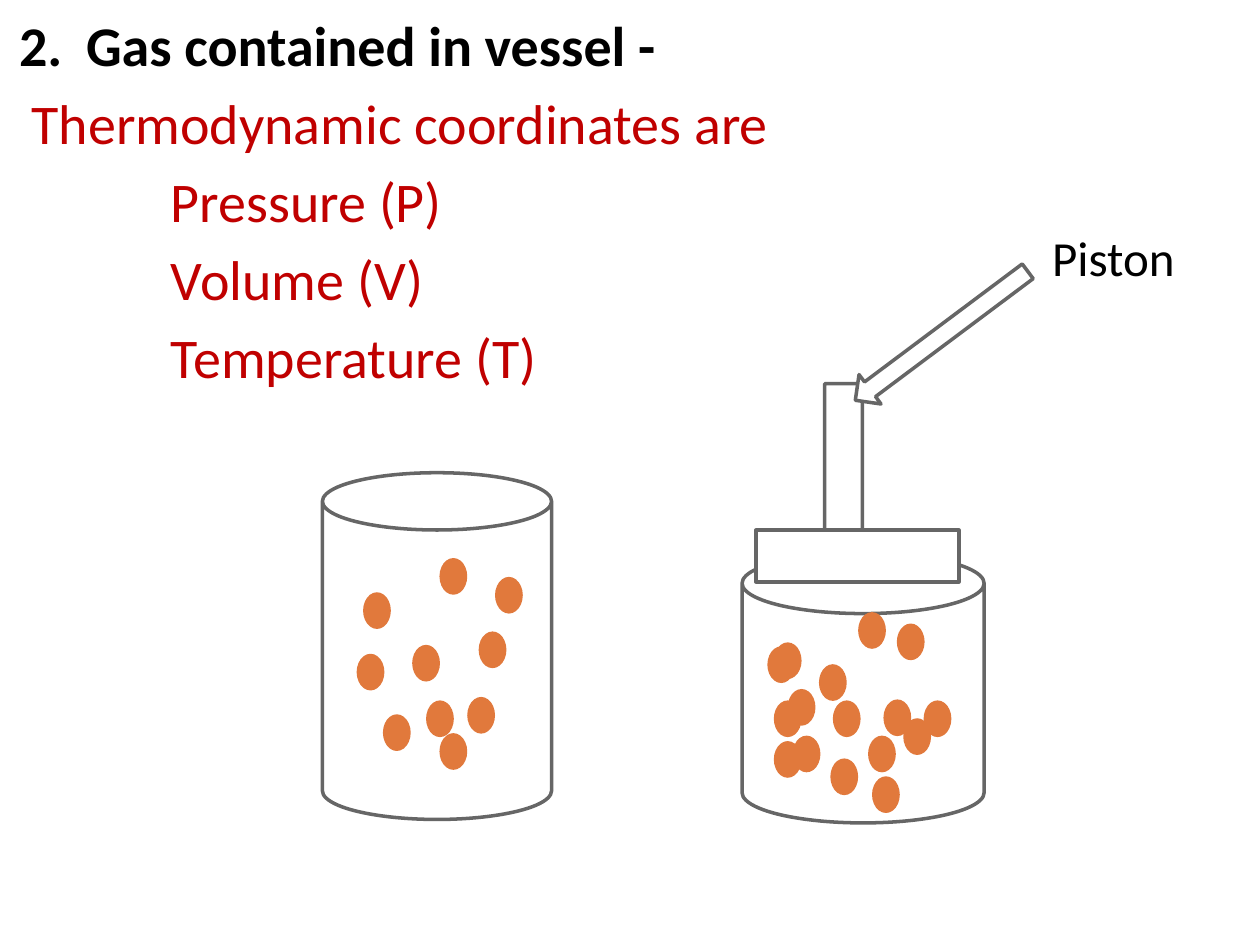
from dataclasses import dataclass

from pptx import Presentation
from pptx import util as u
from pptx.dml.color import RGBColor
from pptx.enum import shapes, text


@dataclass(frozen=True)
class Theme:
    font: str = "Calibri"
    ink: RGBColor = RGBColor(0x00, 0x00, 0x00)
    accent: RGBColor = RGBColor(0xC0, 0x00, 0x00)
    paper: RGBColor = RGBColor(0xFF, 0xFF, 0xFF)
    outline: RGBColor = RGBColor(0x66, 0x66, 0x66)
    gas: RGBColor = RGBColor(0xE1, 0x79, 0x3C)
    body_size: u.Pt = u.Pt(32)
    label_size: u.Pt = u.Pt(28)
    line_width: u.Pt = u.Pt(2)


theme = Theme()
KIND = shapes.MSO_SHAPE


def add_part(kind, box, fill, outlined=True, rotation=0):
    """Add one drawn part; box is left, top, width, height in cm."""
    sp = s.shapes.add_shape(kind, *map(u.Cm, box))
    sp.shadow.inherit = False
    sp.rotation = rotation
    sp.fill.solid()
    sp.fill.fore_color.rgb = fill
    if outlined:
        sp.line.color.rgb = theme.outline
        sp.line.width = theme.line_width
    else:
        sp.line.fill.background()


def format_runs(p, size, color, bold=False):
    for r in p.runs:
        r.font.name = theme.font
        r.font.size = size
        r.font.bold = bold
        r.font.color.rgb = color


prs = Presentation()
prs.slide_width, prs.slide_height = u.Cm(25.4), u.Cm(19.05)
s = prs.slides.add_slide(prs.slide_layouts[0])
title = s.shapes.title
title.element.getparent().remove(title.element)

# Heading and coordinates: text, left margin, first-line indent (cm), colour, bold
lines = [
    ("2.\tGas contained in vessel -", 1.35, -1.35, theme.ink, True),
    ("Thermodynamic coordinates are", 0.25, 0, theme.accent, False),
    ("Pressure (P)", 3.06, 0, theme.accent, False),
    ("Volume (V)", 3.06, 0, theme.accent, False),
    ("Temperature (T)", 3.06, 0, theme.accent, False),
]
body = s.placeholders[1]
body.left, body.top, body.width, body.height = map(u.Cm, (0.13, 0.23, 19.05, 8.89))
tf = body.text_frame
tf.auto_size = text.MSO_AUTO_SIZE.NONE
tf.vertical_anchor = text.MSO_ANCHOR.TOP
tf.text = "\n".join(line[0] for line in lines)
for p, (_, margin, indent, color, bold) in zip(tf.paragraphs, lines):
    p.alignment = text.PP_ALIGN.LEFT
    p.line_spacing = 0.9
    p.space_before = u.Pt(10)
    pPr = p._p.get_or_add_pPr()
    pPr.set("marL", str(u.Cm(margin)))
    pPr.set("indent", str(u.Cm(indent)))
    format_runs(p, theme.body_size, color, bold)

# Each vessel with the top-left corners of its molecules
piston_vessel = (14.96, 11.15, 4.88, 5.44)
piston_gas = [
    (17.5, 14.83), (15.47, 13.03), (15.6, 14.94), (16.51, 13.39),
    (16.79, 14.12), (15.88, 13.89), (15.98, 14.83), (18.62, 14.12),
    (18.21, 14.48), (18.08, 12.57), (17.3, 12.34), (15.6, 14.12),
    (17.81, 14.1), (16.74, 15.29), (17.58, 15.65), (15.6, 12.95),
]
plain_vessel = (6.5, 9.53, 4.62, 6.99)
plain_gas = [
    (7.32, 11.94), (8.31, 13), (9.98, 11.63), (8.59, 14.12), (7.72, 14.4),
    (9.42, 14.05), (7.19, 13.18), (9.65, 12.73), (8.86, 11.25), (8.86, 14.78),
]
for vessel, gas in ((piston_vessel, piston_gas), (plain_vessel, plain_gas)):
    add_part(KIND.CAN, vessel, theme.paper)
    for corner in gas:
        add_part(KIND.OVAL, (*corner, 0.56, 0.74), theme.gas, outlined=False)

# Piston rod, pointer and label; the plate covers the rod's arrowhead
add_part(KIND.RIGHT_ARROW, (15.06, 8.92, 3.89, 1.52), theme.paper, rotation=90)
add_part(KIND.RIGHT_ARROW, (16.81, 6.4, 4.34, 0.74), theme.paper, rotation=143.2)

label = s.shapes.add_textbox(*map(u.Cm, (20.96, 4.47, 3.81, 1.42)))
tf = label.text_frame
tf.word_wrap = True
tf.auto_size = text.MSO_AUTO_SIZE.SHAPE_TO_FIT_TEXT
tf.text = "Piston"
format_runs(tf.paragraphs[0], theme.label_size, theme.ink)

add_part(KIND.RECTANGLE, (15.24, 10.69, 4.09, 1.04), theme.paper)

prs.save("out.pptx")
